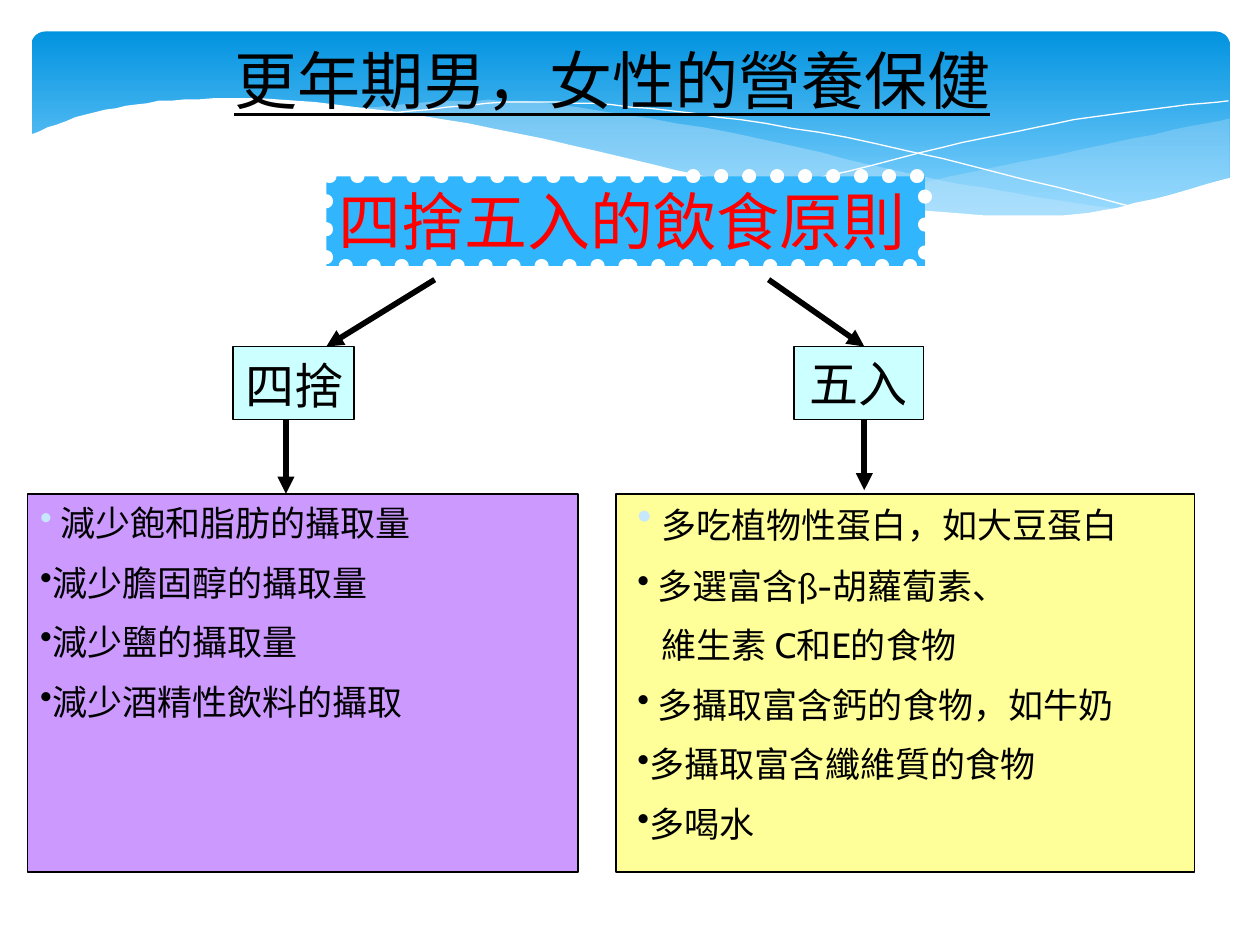
"""Build the slide on diet rules for midlife men and women."""
from dataclasses import dataclass

from lxml.etree import SubElement
from pptx import Presentation
from pptx.dml.color import RGBColor
from pptx.enum.dml import MSO_LINE
from pptx.enum.shapes import MSO_CONNECTOR, MSO_SHAPE
from pptx.enum.text import MSO_ANCHOR, MSO_AUTO_SIZE, PP_ALIGN
from pptx.oxml.ns import qn
from pptx.util import Pt

LATIN, ASIAN = "Cabin", "Noto Sans CJK SC"
BLACK, WHITE, PALE = "000000", "FFFFFF", "C6E7FC"
UNIT = Pt(0.72)
STEPS = 8
HEAD, FOOT, PANEL = 198, 239.8, 282.2
LEFT, RIGHT = 163.4, 493.9


@dataclass
class Wave:
    """Hold edges by their knots, in hundredths of an inch."""
    edges: list
    fill: str = ""
    alpha: int = 100


@dataclass
class Box:
    """Hold a rectangle's place and fill."""
    area: tuple
    fill: str


@dataclass
class Arrow:
    """Hold the two ends of an arrow."""
    start: tuple
    end: tuple


WAVES = [
    Wave([[(976, 94), (861, 118), (661, 160)],
          [(661, 160), (769, 171), (863, 170), (976, 141)]], PALE, 29),
    Wave([[(893, 167), (741, 142), (598, 109), (442, 83), (361, 80), (286, 86)],
          [(286, 86), (404, 106), (566, 143), (722, 168), (807, 173), (893, 167)]],
         PALE, 40),
    Wave([[(309, 90), (416, 81), (533, 88), (695, 114), (907, 166)]]),
    Wave([[(613, 151), (748, 117), (866, 93), (975, 80)]]),
    Wave([[(977, 141), (875, 167), (793, 171), (688, 162), (555, 139), (391, 102),
           (250, 81), (146, 79), (76, 89), (23, 107)],
          [(23, 224), (977, 224)]], WHITE),
]
BOXES = [
    Box((133.2, HEAD, 69.1, 41.8), "CCFFFF"),
    Box((453.6, HEAD, 74.2, 41.8), "CCFFFF"),
    Box((15.8, PANEL, 314.6, 216), "CC99FF"),
    Box((352.1, PANEL, 330.5, 216), "FFFF99"),
]
ARROWS = [
    Arrow((LEFT, FOOT), (LEFT, PANEL)),
    Arrow((248.4, 159.8), (186.5, HEAD)),
    Arrow((439.2, 159.8), (RIGHT, HEAD)),
    Arrow((RIGHT, FOOT), (RIGHT, 280.1)),
]
LESS = ["• 減少飽和脂肪的攝取量", "•減少膽固醇的攝取量", "•減少鹽的攝取量",
        "•減少酒精性飲料的攝取"]
MORE = ["•多吃植物性蛋白，如大豆蛋白", "• 多選富含ß-胡蘿蔔素、", "維生素 C和E的食物",
        "• 多攝取富含鈣的食物，如牛奶", "•多攝取富含纖維質的食物", "•多喝水"]


def hue(code: str) -> RGBColor:
    """Turn a hex string into a colour."""
    return RGBColor.from_string(code)


def pts(*nums: float) -> list:
    """Turn numbers into lengths in points."""
    return [Pt(num) for num in nums]


def smooth(knots: list) -> list:
    """Run a Catmull-Rom curve through the knots."""
    ends = [knots[0], *knots, knots[-1]]
    dots = [knots[0]]
    for quad in zip(ends, ends[1:], ends[2:], ends[3:]):
        for step in range(1, STEPS + 1):
            t = step / STEPS
            dots.append(tuple(
                b + t * (c - a + t * (2 * a - 5 * b + 4 * c - d
                                      + t * (3 * b - a - 3 * c + d))) / 2
                for a, b, c, d in zip(*quad)))
    return dots


def add_run(para, text: str, size: float, color: str, font: str, under: bool) -> None:
    """Add one run with its font."""
    run = para.add_run()
    run.text = text
    run.font.size, run.font.name = Pt(size), font
    run.font.color.rgb = hue(color)
    if under:
        run.font.underline = True
    SubElement(run.font._rPr, qn("a:ea"), typeface=ASIAN)


def write(shape, lines: list, *, size: float, color: str = BLACK, font: str = LATIN,
          under: bool = False, wrap: bool = False, gap: int = 0, lead: float = 0,
          align=PP_ALIGN.LEFT, anchor=MSO_ANCHOR.TOP, grow: bool = True) -> None:
    """Fill a shape with paragraphs, with a bullet where a line starts with one."""
    frame = shape.text_frame
    frame.word_wrap, frame.vertical_anchor = wrap, anchor
    frame.auto_size = MSO_AUTO_SIZE.SHAPE_TO_FIT_TEXT if grow else MSO_AUTO_SIZE.NONE
    for num, line in enumerate(lines):
        para = frame.add_paragraph() if num else frame.paragraphs[0]
        para.alignment = align
        props = para._p.get_or_add_pPr()
        if gap:
            space = SubElement(props, qn("a:spcBef"))
            SubElement(space, qn("a:spcPct"), val=str(gap * 1000))
        if line.startswith("•"):
            if num == 0:
                tint = SubElement(props, qn("a:buClr"))
                SubElement(tint, qn("a:srgbClr"), val=PALE)
            SubElement(props, qn("a:buChar"), char="•")
        elif num:
            props.set("marL", str(Pt(14)))
        if lead and num == 0:
            add_run(para, " ", lead, color, font, under)
        add_run(para, line.removeprefix("•"), size, color, font, under)


def draw_sky(slide) -> None:
    """Draw the blue band and its waves."""
    band = slide.shapes.add_shape(MSO_SHAPE.ROUNDED_RECTANGLE, *pts(18, 18, 684.7, 112.3))
    band.adjustments[0] = 0.07
    band.shadow.inherit = False
    band.line.fill.background()
    band.fill.gradient()
    band.fill.gradient_angle = 270
    for stop, code, place in zip(band.fill.gradient_stops, ("0293E0", "83D3FE"), (0, 0.9)):
        stop.color.rgb, stop.position = hue(code), place
    for wave in WAVES:
        draw_wave(slide, wave)


def draw_wave(slide, wave: Wave) -> None:
    """Draw a filled wave, or a thin white curve if it has no fill."""
    dots = [dot for edge in wave.edges for dot in smooth(edge)]
    pen = slide.shapes.build_freeform(*dots[0], scale=UNIT)
    pen.add_line_segments(dots[1:], close=bool(wave.fill))
    shape = pen.convert_to_shape()
    shape.shadow.inherit = False
    if wave.fill:
        shape.fill.solid()
        shape.fill.fore_color.rgb = hue(wave.fill)
        shape.line.fill.background()
        if wave.alpha < 100:
            tint = next(shape.element.spPr.iter(qn("a:srgbClr")))
            SubElement(tint, qn("a:alpha"), val=str(wave.alpha * 1000))
    else:
        shape.fill.background()
        shape.line.color.rgb, shape.line.width = hue(WHITE), Pt(0)


def draw_box(slide, box: Box, edge: str = BLACK, width: float = 1):
    """Draw a filled rectangle with an outline."""
    shape = slide.shapes.add_shape(MSO_SHAPE.RECTANGLE, *pts(*box.area))
    shape.shadow.inherit = False
    shape.fill.solid()
    shape.fill.fore_color.rgb = hue(box.fill)
    shape.line.color.rgb, shape.line.width = hue(edge), Pt(width)
    return shape


def draw_arrow(slide, arrow: Arrow) -> None:
    """Draw a thick black arrow."""
    link = slide.shapes.add_connector(MSO_CONNECTOR.STRAIGHT, *pts(*arrow.start, *arrow.end))
    link.line.color.rgb, link.line.width = hue(BLACK), Pt(3.25)
    SubElement(link.line._get_or_add_ln(), qn("a:tailEnd"), type="triangle")
    SubElement(link.element.spPr, qn("a:effectLst"))


def main() -> None:
    """Build and save the slide."""
    deck = Presentation()
    deck.slide_width, deck.slide_height = pts(720, 540)
    slide = deck.slides.add_slide(deck.slide_layouts[5])
    draw_sky(slide)
    title = slide.shapes.title
    slide.shapes.element.append(title.element)
    title.left, title.top, title.width, title.height = pts(126.7, 20.2, 450.7, 51.1)
    write(title, ["更年期男，女性的營養保健"], size=36, under=True)
    rule = draw_box(slide, Box((186.5, 100.8, 342, 51.1), "31B6FD"), WHITE, 8)
    rule.line.dash_style = MSO_LINE.ROUND_DOT
    rule.line._get_or_add_ln().set("cap", "rnd")
    write(rule, ["四捨五入的飲食原則"], size=36, color="FF0000", font=ASIAN)
    boxes = [draw_box(slide, box) for box in BOXES]
    write(boxes[1], ["五入"], size=28, align=PP_ALIGN.CENTER, anchor=MSO_ANCHOR.MIDDLE,
          grow=False)
    for area, lines, size, lead in (((133.2, 199.4, 90.7, 41), ["四捨"], 28, 0),
                                    ((15.8, 283, 303.8, 140.4), LESS, 20, 0),
                                    ((357.1, 280.1, 303.8, 218.2), MORE, 20, 24)):
        note = slide.shapes.add_textbox(*pts(*area))
        write(note, lines, size=size, wrap=True, gap=50, lead=lead)
    for arrow in ARROWS:
        draw_arrow(slide, arrow)
    deck.save("out.pptx")


if __name__ == "__main__":
    main()
